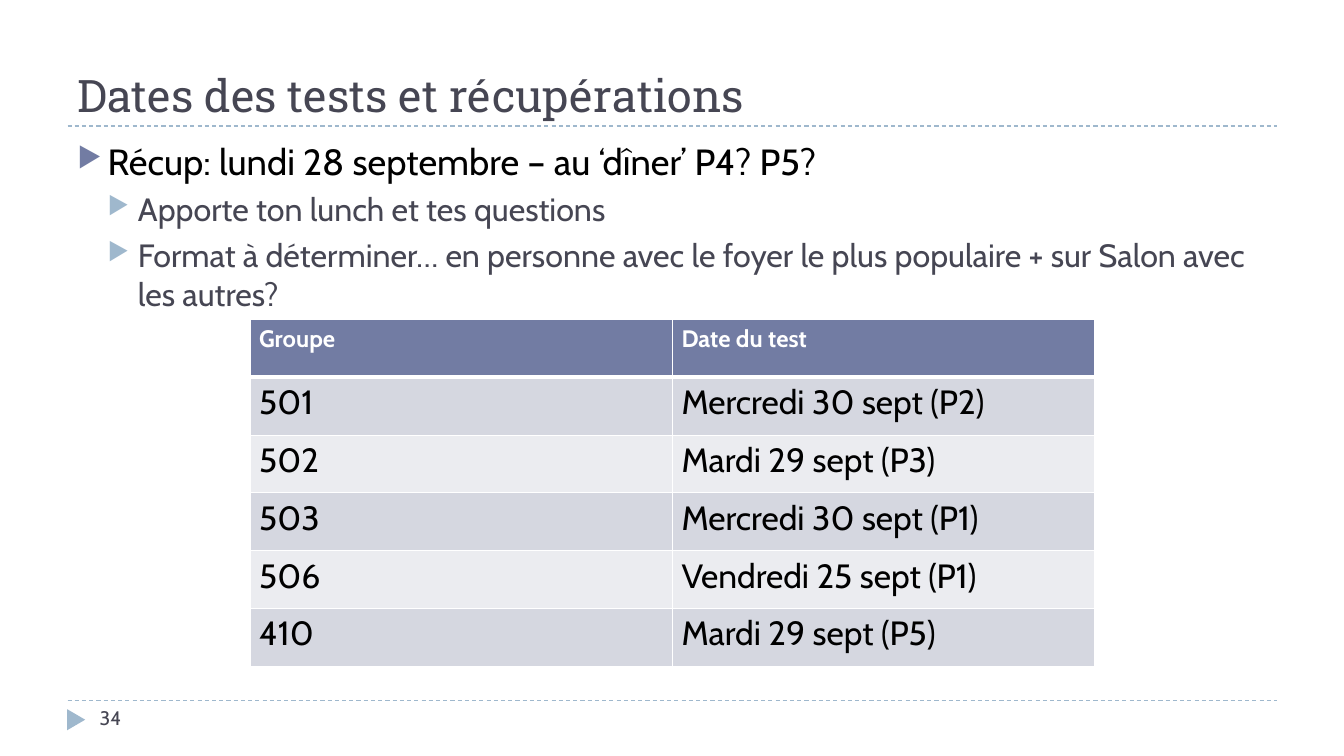
from lxml.etree import SubElement as Sub
from pptx import Presentation
from pptx.dml.color import RGBColor
from pptx.enum.dml import MSO_LINE
from pptx.enum.shapes import MSO_CONNECTOR, MSO_SHAPE
from pptx.enum.text import MSO_ANCHOR
from pptx.oxml.ns import qn
from pptx.util import Inches, Pt

INK = RGBColor(0x46, 0x46, 0x53)
BLACK = RGBColor(0x00, 0x00, 0x00)
WHITE = RGBColor(0xFF, 0xFF, 0xFF)
SKY = RGBColor(0x9F, 0xB8, 0xCD)
SLATE = RGBColor(0x72, 0x7C, 0xA3)
DARK = RGBColor(0xD5, 0xD7, 0xE0)
PALE = RGBColor(0xEB, 0xEC, 0xF0)


def add_run(para, text, size, color, face="Cabin", bold=False):
    run = para.add_run()
    run.text = text
    font = run.font
    font.name, font.size, font.bold = face, Pt(size), bold
    font.color.rgb = color


def add_box(left, top, width, height, anchor=MSO_ANCHOR.TOP):
    frame = slide.shapes.add_textbox(
        Inches(left), Inches(top), Inches(width), Inches(height)).text_frame
    frame.word_wrap = True
    frame.vertical_anchor = anchor
    return frame


deck = Presentation()
deck.slide_width, deck.slide_height = Inches(13.33), Inches(7.5)
slide = deck.slides.add_slide(deck.slide_layouts[6])

# Dashed rules and page marker
for y in (6.95, 1.25):
    rule = slide.shapes.add_connector(
        MSO_CONNECTOR.STRAIGHT, Inches(0.67), Inches(y), Inches(12.67), Inches(y))
    rule.line.color.rgb = SKY
    rule.line.width = Pt(0.75)
    rule.line.dash_style = MSO_LINE.DASH
    Sub(rule.element.spPr, qn("a:effectLst"))

mark = slide.shapes.add_shape(
    MSO_SHAPE.ISOSCELES_TRIANGLE, Inches(0.65), Inches(7.05), Inches(0.21), Inches(0.18))
mark.rotation = 90
mark.shadow.inherit = False
mark.fill.solid()
mark.fill.fore_color.rgb = SKY
mark.line.fill.background()

# Title and page number
title = add_box(0.67, 0.17, 12, 1.08, MSO_ANCHOR.BOTTOM)
add_run(title.paragraphs[0], "Dates des tests et récupérations", 32, INK, "Roboto Slab")
page = add_box(0.89, 6.95, 2.89, 0.4)
add_run(page.paragraphs[0], "34", 14, INK)

# Bulleted notes
notes = [
    (0, "Récup: lundi 28 septembre – au ‘dîner’ P4? P5?"),
    (1, "Apporte ton lunch et tes questions"),
    (1, "Format à déterminer… en personne avec le foyer le plus populaire"
        " + sur Salon avec les autres?"),
]
styles = [(26, BLACK, SLATE, 6), (23, INK, SKY, 5)]
body = add_box(0.67, 1.33, 12, 5.4)
for i, (level, text) in enumerate(notes):
    size, color, tint, gap = styles[level]
    para = body.add_paragraph() if i else body.paragraphs[0]
    para.level = level
    para.space_before = Pt(gap)
    props = para._p.get_or_add_pPr()
    props.set("marL", str(Inches(0.3 * (level + 1))))
    props.set("indent", str(Inches(-0.3)))
    Sub(Sub(props, qn("a:buClr")), qn("a:srgbClr"), val=str(tint))
    Sub(props, qn("a:buSzPct"), val="76000")
    Sub(props, qn("a:buChar"), char="▶")
    add_run(para, text, size, color)

# Test dates by group
rows = [
    ("Groupe", "Date du test"),
    ("501", "Mercredi 30 sept (P2)"),
    ("502", "Mardi 29 sept (P3)"),
    ("503", "Mercredi 30 sept (P1)"),
    ("506", "Vendredi 25 sept (P1)"),
    ("410", "Mardi 29 sept (P5)"),
]
table = slide.shapes.add_table(
    len(rows), 2, Inches(2.48), Inches(3.17), Inches(8.38), Inches(3.44)).table
for r, row in enumerate(rows):
    head = r == 0
    for c, text in enumerate(row):
        cell = table.cell(r, c)
        cell.margin_left = cell.margin_right = Inches(0.09)
        cell.margin_top = cell.margin_bottom = Inches(0.05)
        props = cell._tc.get_or_add_tcPr()
        for side in "LRTB":
            thick = (head and side == "B") or (r == 1 and side == "T")
            edge = Sub(props, qn(f"a:ln{side}"), w=str(Pt(3 if thick else 1)))
            Sub(Sub(edge, qn("a:solidFill")), qn("a:srgbClr"), val=str(WHITE))
        cell.fill.solid()
        cell.fill.fore_color.rgb = SLATE if head else DARK if r % 2 else PALE
        add_run(cell.text_frame.paragraphs[0], text, 17 if head else 24,
                WHITE if head else BLACK, bold=head)

deck.save("out.pptx")
